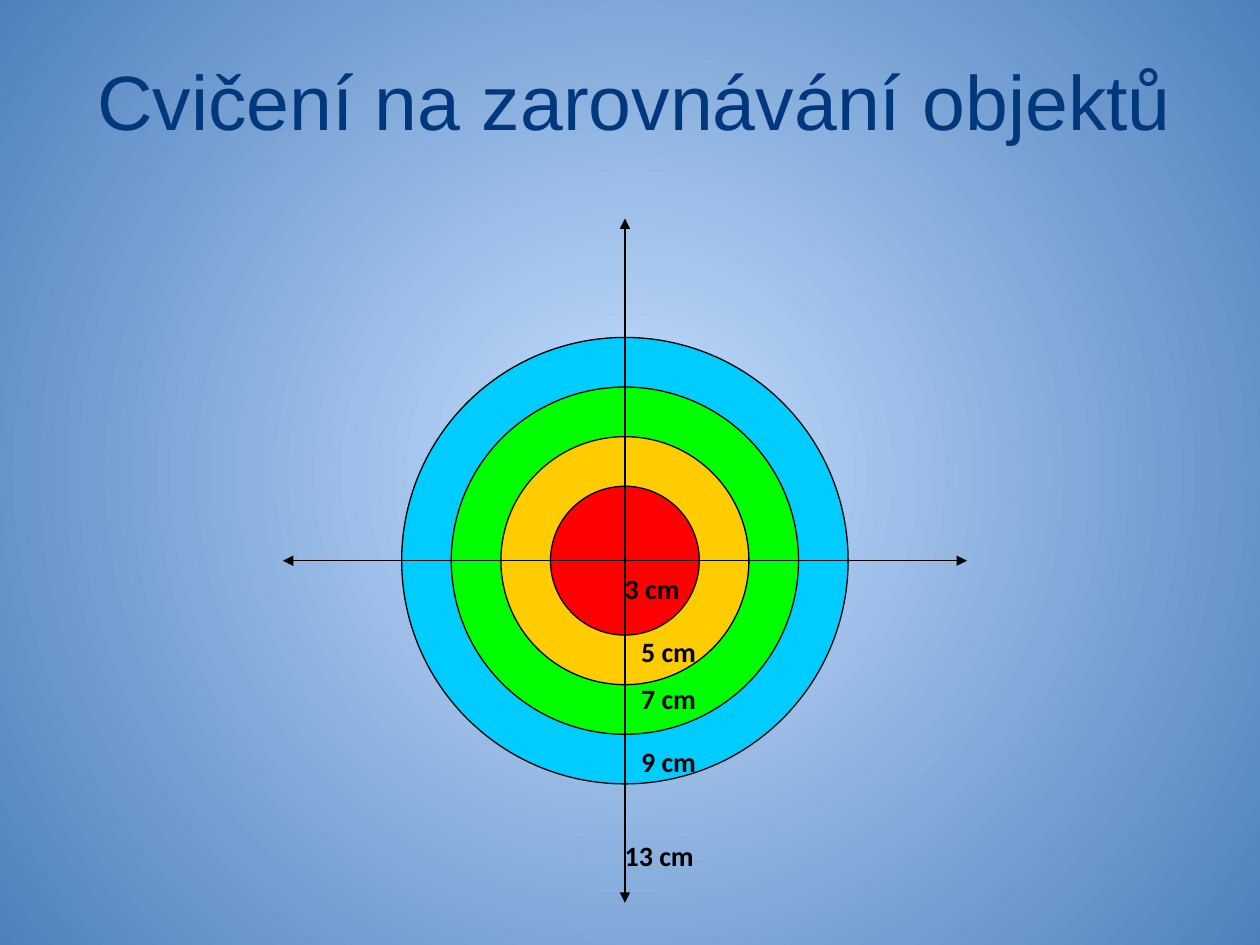
"""Build a slide with a target of concentric rings, two axes and size labels."""
import pptx
import pptx.dml.color
import pptx.enum.shapes
import pptx.enum.text
import pptx.oxml.ns
import pptx.util
from lxml import etree

Inches = pptx.util.Inches
Pt = pptx.util.Pt
qn = pptx.oxml.ns.qn
rgb = pptx.dml.color.RGBColor.from_string


class Theme:
    glow, edge = rgb("C6DFFF"), rgb("4F81BD")
    title, ink = rgb("00387E"), rgb("000000")
    rings = {9: rgb("00CCFF"), 7: rgb("00FF00"), 5: rgb("FFCC00"), 3: rgb("FF0000")}
    head, body = "Arial", "Calibri"
    big, small, thin = Pt(44), Pt(16), Pt(0.75)


def style(font, name, size, color, bold=False):
    font.name, font.size, font.bold = name, size, bold
    font.color.rgb = color


deck = pptx.Presentation()
deck.slide_width, deck.slide_height = Inches(10), Inches(7.5)
slide = deck.slides.add_slide(deck.slide_layouts[5])

back = slide.background.fill
back.gradient()
for stop, color in zip(back.gradient_stops, (Theme.glow, Theme.edge)):
    stop.color.rgb = color
grad = slide.element.find(".//" + qn("a:gradFill"))
grad.remove(grad.find(qn("a:lin")))
shade = etree.SubElement(grad, qn("a:path"), {"path": "circle"})
etree.SubElement(shade, qn("a:fillToRect"), {side: "50000" for side in "ltrb"})

title = slide.shapes.title
title.left, title.top = Inches(0.67), Inches(0.25)
title.width, title.height = Inches(8.92), Inches(1.08)
frame = title.text_frame
frame.text = "Cvičení na zarovnávání objektů"
frame.auto_size = pptx.enum.text.MSO_AUTO_SIZE.NONE
frame.vertical_anchor = pptx.enum.text.MSO_ANCHOR.MIDDLE
line = frame.paragraphs[0]
line.alignment = pptx.enum.text.PP_ALIGN.LEFT
style(line.font, Theme.head, Theme.big, Theme.title)

target = slide.shapes.add_group_shape().shapes
mid_x, mid_y, reach = 4.96, 4.45, 2.715

for size, color in Theme.rings.items():
    width = size / 2.54
    ring = target.add_shape(
        pptx.enum.shapes.MSO_SHAPE.OVAL,
        Inches(mid_x - width / 2), Inches(mid_y - width / 2),
        Inches(width), Inches(width))
    ring.shadow.inherit = False
    ring.fill.solid()
    ring.fill.fore_color.rgb = color
    ring.line.color.rgb = Theme.ink
    ring.line.width = Theme.thin

for dx, dy in ((reach, 0), (0, reach)):
    axis = target.add_connector(
        pptx.enum.shapes.MSO_CONNECTOR.STRAIGHT,
        Inches(mid_x - dx), Inches(mid_y - dy),
        Inches(mid_x + dx), Inches(mid_y + dy))
    axis.line.color.rgb = Theme.ink
    axis.line.width = Theme.thin
    for end in ("a:headEnd", "a:tailEnd"):
        etree.SubElement(axis.line._get_or_add_ln(), qn(end), {"type": "triangle"})
    etree.SubElement(axis.element.spPr, qn("a:effectLst"))

labels = ((3, 4.86, 4.49), (5, 4.99, 4.99), (7, 4.99, 5.36),
          (9, 4.99, 5.86), (13, 4.86, 6.61))
for size, left, top in labels:
    box = target.add_textbox(Inches(left), Inches(top), Inches(0.87), Inches(0.5))
    box.text_frame.word_wrap = True
    line = box.text_frame.paragraphs[0]
    line.text = f"{size} cm"
    line.space_after = Pt(10)
    style(line.font, Theme.body, Theme.small, Theme.ink, True)

deck.save("out.pptx")
